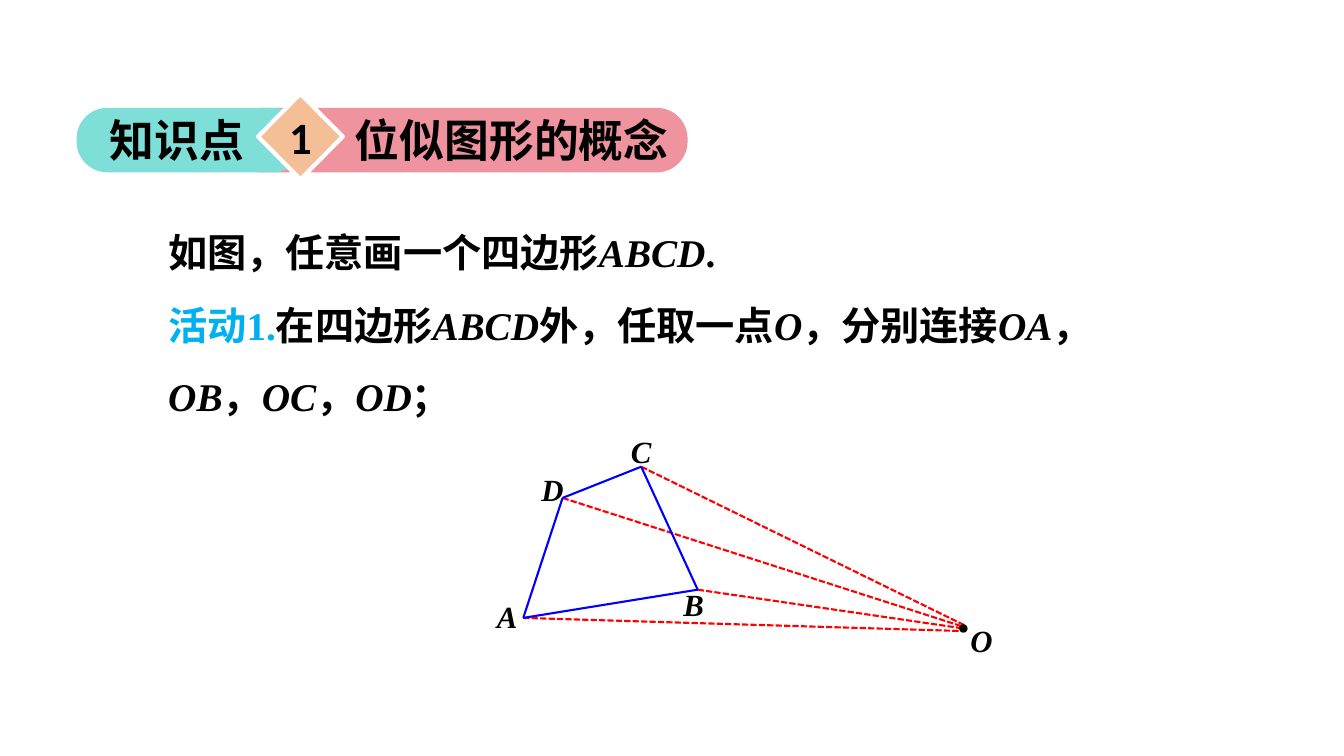
from lxml import etree
from pptx import Presentation
from pptx.dml.color import RGBColor
from pptx.enum.dml import MSO_LINE
from pptx.enum.shapes import MSO_CONNECTOR, MSO_SHAPE
from pptx.enum.text import MSO_ANCHOR, PP_ALIGN
from pptx.oxml.ns import qn
from pptx.util import Inches, Pt

STRAIGHT = MSO_CONNECTOR.STRAIGHT
ROUNDED, DIAMOND, OVAL = MSO_SHAPE.ROUNDED_RECTANGLE, MSO_SHAPE.DIAMOND, MSO_SHAPE.OVAL
DASH, CENTER, MIDDLE = MSO_LINE.SQUARE_DOT, PP_ALIGN.CENTER, MSO_ANCHOR.MIDDLE
SANS, SERIF, DIGIT = "Noto Sans CJK SC", "Times New Roman", "Calibri"
BLACK, WHITE, TEAL, ROSE, PEACH = "000000", "FFFFFF", "7DDFD7", "EF949E", "F4BE96"
SKY, BLUE, RED = "00B0F0", "0000FF", "FF0000"


def rgb(value):
    """Turn a hex string into a colour."""
    return RGBColor.from_string(value)


def style(p, size, font):
    """Give a paragraph bold black type."""
    p.font.size, p.font.bold, p.font.name = Pt(size), True, font
    p.font.color.rgb = rgb(BLACK)
    fonts = p._p.pPr.find(qn("a:defRPr"))
    etree.SubElement(fonts, qn("a:ea")).set("typeface", SANS)


def add_text(s, box, runs, size, font, wrap=True, spacing=None):
    """Write (text, italic, colour) runs as one paragraph in a text box."""
    tf = s.shapes.add_textbox(*map(Inches, box)).text_frame
    tf.word_wrap = wrap
    p = tf.paragraphs[0]
    style(p, size, font)
    if spacing:
        p.line_spacing = spacing
    for text, italic, color in runs:
        r = p.add_run()
        r.text = text
        if italic:
            r.font.italic = True
        if color:
            r.font.color.rgb = rgb(color)


def add_shape(s, kind, box, fill, line=None, width=1):
    """Place a flat preset shape."""
    sp = s.shapes.add_shape(kind, *map(Inches, box))
    sp.shadow.inherit = False
    sp.fill.solid()
    sp.fill.fore_color.rgb = rgb(fill)
    if line:
        sp.line.color.rgb = rgb(line)
        sp.line.width = Pt(width)
    else:
        sp.line.fill.background()
    return sp


def add_line(shapes, start, end, color, dash=None):
    """Draw a straight segment between two points."""
    c = shapes.add_connector(STRAIGHT, *map(Inches, start + end))
    c.line.color.rgb = rgb(color)
    c.line.width = Pt(1.5)
    if dash:
        c.line.dash_style = dash
    etree.SubElement(c._element.spPr, qn("a:effectLst"))


def banner(s, box, label, number, title):
    """Build the two-tone heading with its numbered diamond."""
    x, y, w, h = box
    for left, width, fill in ((0.252, 0.748, ROSE), (0, 0.372, TEAL)):
        sp = add_shape(s, ROUNDED, (x + left * w, y, width * w, h), fill)
        sp.adjustments[0] = 0.477
    add_text(s, (x + 0.23, y, 1.59, h), [(label, False, None)], 32, SANS, wrap=False)
    add_text(s, (x + 2.66, y, 4.27, h), [(title, False, None)], 32, SANS)
    sp = add_shape(s, DIAMOND, (x + 1.8, y - 0.14, 0.84, 0.85), PEACH, WHITE, 3)
    tf = sp.text_frame
    tf.word_wrap, tf.vertical_anchor = False, MIDDLE
    p = tf.paragraphs[0]
    p.alignment = CENTER
    style(p, 32, DIGIT)
    p.add_run().text = number


def statement(s, box):
    """Write the opening sentence and the first activity."""
    x, y, w, h = box
    intro = [("如图，任意画一个四边形", False, None), ("ABCD", True, None), (".", False, None)]
    parts = ("在四边形", "ABCD", "外，任取一点", "O", "，分别连接", "OA", "，",
             "OB", "，", "OC", "，", "OD", "；")
    activity = [("活动1.", False, SKY)]
    activity += [(part, part.isascii(), None) for part in parts]
    add_text(s, (x, y + 0.63, w, h - 0.63), activity, 28, SERIF, spacing=1.5)
    add_text(s, (x, y, 0.75 * w, 0.65), intro, 28, SERIF, spacing=1.3)


def figure(s, box):
    """Draw quadrilateral ABCD, point O and the dashed rays joining them."""
    x, y, w, h = box
    points = {"A": (x, y + 1.5), "B": (x + 1.73, y + 1.22),
              "C": (x + 1.17, y), "D": (x + 0.39, y + 0.31)}
    ray_ends = {"A": (x + 4.34, y + 1.63), "B": (x + 4.4, y + 1.61),
                "D": (x + 4.34, y + 1.58), "C": (x + 4.39, y + 1.58)}
    for name, end in ray_ends.items():
        add_line(s.shapes, points[name], end, RED, DASH)
    sides = s.shapes.add_group_shape().shapes
    for a, b in ("DC", "DA", "CB", "AB"):
        add_line(sides, points[a], points[b], BLUE)
    dot = 0.07
    points["O"] = (x + w - dot / 2, y + h - dot / 2)
    left, top = points["O"]
    add_shape(s, OVAL, (left - dot / 2, top - dot / 2, dot, dot), BLACK, BLACK)
    offsets = {"A": (-0.36, -0.25), "D": (-0.31, -0.32), "C": (-0.2, -0.39),
               "B": (-0.24, -0.09), "O": (-0.03, -0.12)}
    for name, (dx, dy) in offsets.items():
        left, top = points[name]
        add_text(s, (left + dx, top + dy, 0.41, 0.47), [(name, True, None)], 22, SERIF, wrap=False)


def main():
    """Assemble the slide and save it."""
    prs = Presentation()
    prs.slide_width, prs.slide_height = Inches(13.33), Inches(7.5)
    s = prs.slides.add_slide(prs.slide_layouts[6])
    banner(s, (0.76, 1.07, 6.06, 0.64), "知识点", "1", "位似图形的概念")
    statement(s, (1.57, 2.08, 9.82, 2.06))
    figure(s, (5.19, 4.63, 4.4, 1.64))
    prs.save("out.pptx")


if __name__ == "__main__":
    main()
